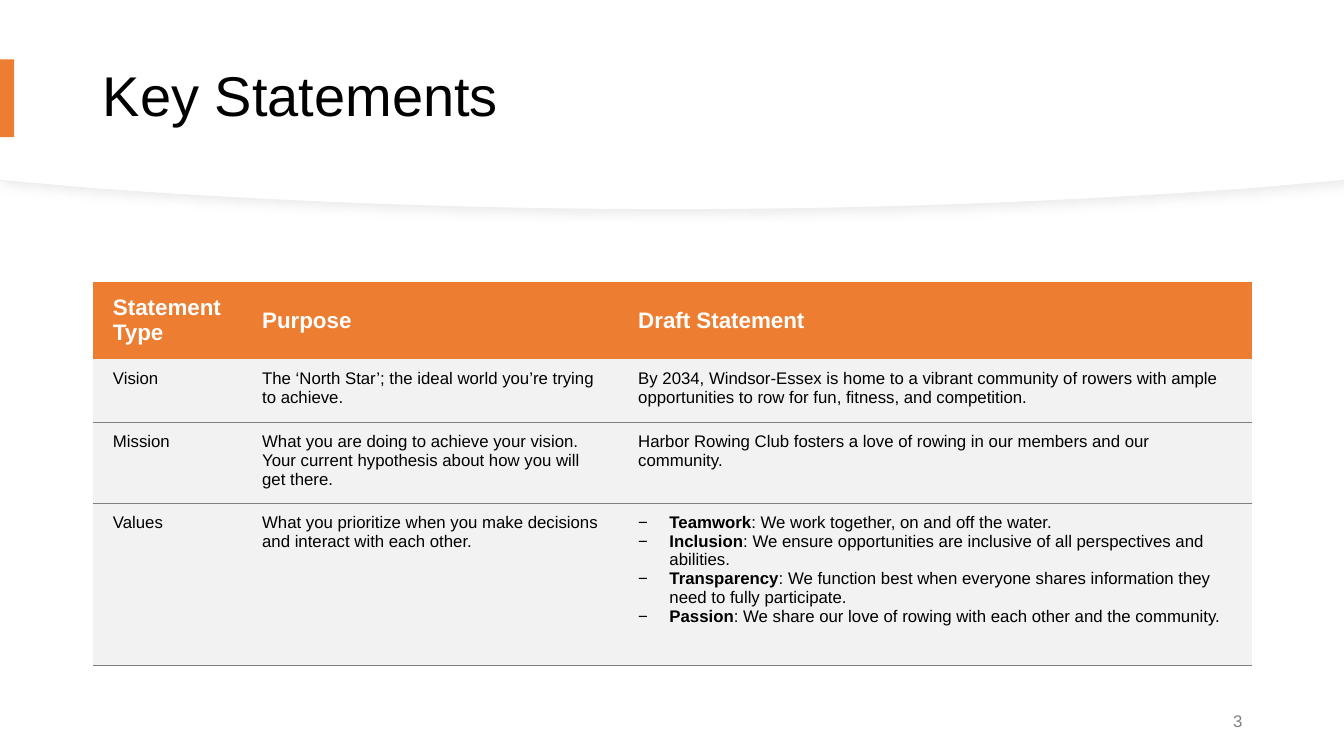
"""Build the Key Statements slide."""
from pptx import Presentation
from pptx.dml.color import RGBColor
from pptx.enum.shapes import MSO_SHAPE
from pptx.enum.text import MSO_ANCHOR, MSO_AUTO_SIZE, PP_ALIGN
from pptx.oxml import parse_xml
from pptx.oxml.ns import nsdecls
from pptx.util import Inches, Pt

WHITE = RGBColor(0xFF, 0xFF, 0xFF)
BLACK = RGBColor(0x00, 0x00, 0x00)
ORANGE = RGBColor(0xED, 0x7D, 0x31)
GRAY = RGBColor(0x80, 0x80, 0x80)
PALE_GRAY = RGBColor(0xF2, 0xF2, 0xF2)
EDGE_GRAY = RGBColor(0xEF, 0xEF, 0xEF)
SHADOW_GRAY = RGBColor(0xD9, 0xD9, 0xD9)

FONT = "Arial"
SLIDE_WIDTH = 13.33
CURVE_STEPS = 24
COLUMN_WIDTHS = [1.48, 3.73, 6.29]
ROW_HEIGHTS = [0.76, 0.63, 0.63, 1.61]
HEADERS = ["Statement Type", "Purpose", "Draft Statement"]
STATEMENTS = [
    ["Vision",
     "The ‘North Star’; the ideal world you’re trying to achieve.",
     "By 2034, Windsor-Essex is home to a vibrant community of rowers with ample "
     "opportunities to row for fun, fitness, and competition."],
    ["Mission",
     "What you are doing to achieve your vision. Your current hypothesis about "
     "how you will get there.",
     "Harbor Rowing Club fosters a love of rowing in our members and our community."],
    ["Values",
     "What you prioritize when you make decisions and interact with each other.",
     ""],
]
VALUES = [
    ("Teamwork", ": We work together, on and off the water."),
    ("Inclusion", ": We ensure opportunities are inclusive of all perspectives and abilities."),
    ("Transparency", ": We function best when everyone shares information they need to "
                     "fully participate."),
    ("Passion", ": We share our love of rowing with each other and the community."),
]


def add_run(paragraph, text, size, color, bold=False):
    """Add one formatted run to a paragraph."""
    run = paragraph.add_run()
    run.text = text
    run.font.name = FONT
    run.font.size = Pt(size)
    run.font.bold = bold
    run.font.color.rgb = color


def bezier_points(start, control_1, control_2, end):
    """Return points along a cubic curve, with its start left out."""
    points = []
    for step in range(1, CURVE_STEPS + 1):
        t = step / CURVE_STEPS
        weights = ((1 - t) ** 3, 3 * t * (1 - t) ** 2, 3 * t ** 2 * (1 - t), t ** 3)
        corners = (start, control_1, control_2, end)
        points.append(tuple(sum(weight * corner[axis] for weight, corner in zip(weights, corners))
                            for axis in (0, 1)))
    return points


def add_curved_panel(slide, depth):
    """Add a white header panel whose bottom edge sags to the given depth."""
    side, shoulder, sag = depth - 0.29, depth - 0.21, depth - 0.08
    right_half = [(12.42, shoulder)] + bezier_points(
        (12.42, shoulder), (10.65, sag), (8.71, depth), (SLIDE_WIDTH / 2, depth))
    left_half = [(SLIDE_WIDTH - x, y) for x, y in reversed(right_half[:-1])]
    outline = [(SLIDE_WIDTH, 0), (SLIDE_WIDTH, side), *right_half, *left_half, (0, side)]
    builder = slide.shapes.build_freeform(0, 0)
    builder.add_line_segments([(Inches(x), Inches(y)) for x, y in outline])
    panel = builder.convert_to_shape()
    panel.shadow.inherit = False
    panel.fill.solid()
    panel.fill.fore_color.rgb = WHITE
    panel.line.fill.background()
    return panel


def add_soft_edge(panel):
    """Give the panel a thin outline and a soft shadow."""
    panel.line.color.rgb = EDGE_GRAY
    panel.line.width = Pt(0.75)
    effects = panel.element.spPr.find("{*}effectLst")
    effects.append(parse_xml(
        f'<a:outerShdw {nsdecls("a")} blurRad="{Pt(7)}" dist="{Pt(3)}" dir="2700000" '
        f'algn="tl" rotWithShape="0"><a:srgbClr val="{SHADOW_GRAY}">'
        '<a:alpha val="50000"/></a:srgbClr></a:outerShdw>'))


def format_title(slide):
    """Place and fill the title, in front of the panels."""
    title = slide.shapes.title
    title.left, title.top = Inches(0.92), Inches(0.28)
    title.width, title.height = Inches(11.5), Inches(1.39)
    frame = title.text_frame
    frame.auto_size = MSO_AUTO_SIZE.NONE
    frame.vertical_anchor = MSO_ANCHOR.MIDDLE
    paragraph = frame.paragraphs[0]
    paragraph.alignment = PP_ALIGN.LEFT
    paragraph.line_spacing = 0.9
    add_run(paragraph, "Key Statements", 40, BLACK)
    title.element.getparent().append(title.element)


def add_accent_bar(slide):
    """Add the orange bar at the left edge."""
    bar = slide.shapes.add_shape(MSO_SHAPE.RECTANGLE, 0, Inches(0.59), Inches(0.14), Inches(0.77))
    bar.shadow.inherit = False
    bar.fill.solid()
    bar.fill.fore_color.rgb = ORANGE
    bar.line.fill.background()


def add_page_number(slide, number):
    """Add the page number at the lower right."""
    box = slide.shapes.add_textbox(Inches(9.42), Inches(6.95), Inches(3), Inches(0.4))
    box.text_frame.word_wrap = True
    box.text_frame.vertical_anchor = MSO_ANCHOR.MIDDLE
    paragraph = box.text_frame.paragraphs[0]
    paragraph.alignment = PP_ALIGN.RIGHT
    paragraph.space_after = Pt(6)
    add_run(paragraph, str(number), 12, GRAY)


def set_borders(cell, ruled_sides):
    """Draw gray rules on the named sides and clear the others."""
    properties = cell._tc.get_or_add_tcPr()
    for side in "LRTB":
        fill = (f'<a:solidFill><a:srgbClr val="{GRAY}"/></a:solidFill>'
                if side in ruled_sides else "<a:noFill/>")
        properties.append(parse_xml(
            f'<a:ln{side} {nsdecls("a")} w="{Pt(0.75)}">{fill}</a:ln{side}>'))


def format_cell(cell, fill_color, anchor, ruled_sides):
    """Set the margins, borders and fill of a cell."""
    cell.margin_left, cell.margin_right = Inches(0.2), Inches(0.15)
    cell.margin_top = cell.margin_bottom = Inches(0.1)
    cell.vertical_anchor = anchor
    set_borders(cell, ruled_sides)
    cell.fill.solid()
    cell.fill.fore_color.rgb = fill_color


def add_values(frame):
    """Fill a text frame with the dashed list of values."""
    for index, (name, meaning) in enumerate(VALUES):
        paragraph = frame.add_paragraph() if index else frame.paragraphs[0]
        properties = paragraph._p.get_or_add_pPr()
        properties.set("marL", str(Inches(0.31)))
        properties.set("indent", str(-Inches(0.31)))
        properties.append(parse_xml(f'<a:buFont {nsdecls("a")} typeface="{FONT}"/>'))
        properties.append(parse_xml(f'<a:buChar {nsdecls("a")} char="−"/>'))
        add_run(paragraph, name, 12, BLACK, bold=True)
        add_run(paragraph, meaning, 12, BLACK)


def add_statement_table(slide):
    """Add the table of statements."""
    table = slide.shapes.add_table(
        len(ROW_HEIGHTS), len(COLUMN_WIDTHS), Inches(0.92), Inches(2.8),
        Inches(sum(COLUMN_WIDTHS)), Inches(sum(ROW_HEIGHTS))).table
    table.horz_banding = False
    for column, width in zip(table.columns, COLUMN_WIDTHS):
        column.width = Inches(width)
    for row, height in zip(table.rows, ROW_HEIGHTS):
        row.height = Inches(height)
    for cell, text in zip(table.rows[0].cells, HEADERS):
        format_cell(cell, ORANGE, MSO_ANCHOR.MIDDLE, "")
        add_run(cell.text_frame.paragraphs[0], text, 16, WHITE, bold=True)
    for row_index, texts in enumerate(STATEMENTS, start=1):
        for cell, text in zip(table.rows[row_index].cells, texts):
            format_cell(cell, PALE_GRAY, MSO_ANCHOR.TOP, "B" if row_index == 1 else "TB")
            if text:
                add_run(cell.text_frame.paragraphs[0], text, 12, BLACK)
    add_values(table.cell(len(STATEMENTS), 2).text_frame)


def main():
    """Build and save the presentation."""
    presentation = Presentation()
    presentation.slide_width, presentation.slide_height = Inches(SLIDE_WIDTH), Inches(7.5)
    slide = presentation.slides.add_slide(presentation.slide_layouts[5])
    add_soft_edge(add_curved_panel(slide, 2.08))
    add_curved_panel(slide, 2.07)
    format_title(slide)
    add_accent_bar(slide)
    add_page_number(slide, 3)
    add_statement_table(slide)
    presentation.save("out.pptx")


if __name__ == "__main__":
    main()
